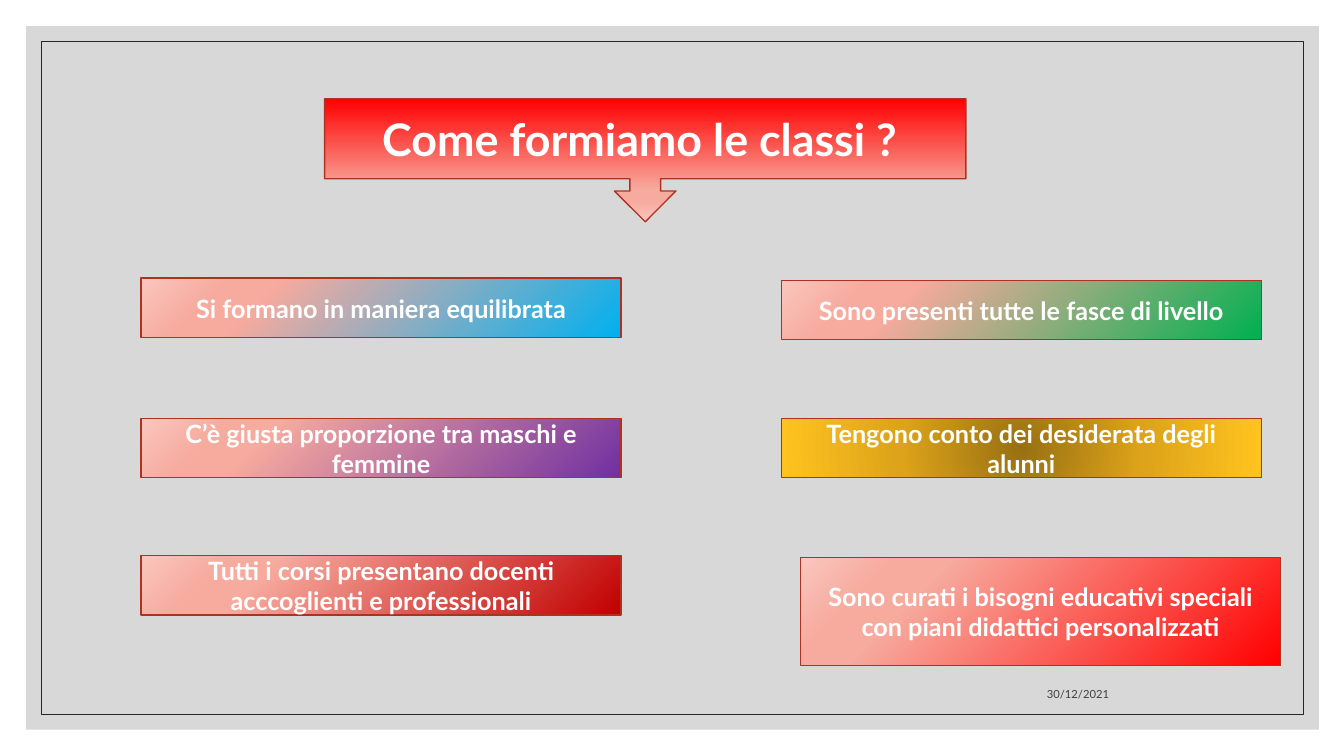
from pptx import Presentation
from pptx.dml.color import RGBColor as RGB
from pptx.enum.shapes import MSO_SHAPE as Shape
from pptx.enum.text import MSO_ANCHOR as Anchor, PP_ALIGN as Align
from pptx.oxml import parse_xml
from pptx.oxml.ns import nsdecls, qn
from pptx.util import Inches, Pt
from lxml.etree import SubElement

COLORS = {
    "white": "FFFFFF", "panel": "BFBFBF", "frame": "262626",
    "date": "3F3F3F", "edge": "AD3320",
    "red": "FF0000", "dark": "C00000", "blue": "00B0F0",
    "green": "00B050", "purple": "7030A0",
    "rose": "F7AA9E", "pale": "FAC6BE",
    "brown": "987012", "ochre": "DDA31A", "gold": "FFC31F",
}
DOWN = '<a:lin ang="5400000" scaled="0"/>'
RADIAL = '<a:path path="circle"><a:fillToRect l="{0}" t="{0}" r="{1}" b="{1}"/></a:path>'
CORNER = RADIAL.format(100000, 0)
CENTER = RADIAL.format(50000, 50000)
GOLD = [(0, "brown"), (50, "ochre"), (100, "gold")]


def fade(color):
    return [(0, color), (74, "rose"), (83, "rose"), (100, "pale")]


class Deck:
    font = "Lato"

    def __init__(self):
        self.prs = Presentation()
        self.prs.slide_width, self.prs.slide_height = Inches(13.33), Inches(7.5)
        self.slide = self.prs.slides.add_slide(self.prs.slide_layouts[6])

    def color(self, name):
        return RGB.from_string(COLORS[name])

    def shape(self, kind, area, fill=None, line=None, width=1, alpha=None):
        shape = self.slide.shapes.add_shape(kind, *map(Inches, area))
        shape.shadow.inherit = False
        if fill:
            shape.fill.solid()
            shape.fill.fore_color.rgb = self.color(fill)
        else:
            shape.fill.background()
        if alpha:
            tint = shape._element.spPr.find(".//" + qn("a:srgbClr"))
            SubElement(tint, qn("a:alpha"), val=str(alpha * 1000))
        if line:
            shape.line.color.rgb = self.color(line)
            shape.line.width = Pt(width)
        else:
            shape.line.fill.background()
        return shape

    def blend(self, shape, stops, way):
        marks = "".join(
            f'<a:gs pos="{pos * 1000}"><a:srgbClr val="{COLORS[name]}"/></a:gs>'
            for pos, name in stops)
        grad = parse_xml(f'<a:gradFill {nsdecls("a")} rotWithShape="1">'
                         f'<a:gsLst>{marks}</a:gsLst>{way}</a:gradFill>')
        props = shape._element.spPr
        props.replace(props.find(qn("a:solidFill")), grad)

    def text(self, shape, words, size, color, align, anchor, bold=False):
        frame = shape.text_frame
        frame.word_wrap = True
        frame.vertical_anchor = anchor
        par = frame.paragraphs[0]
        par.text = words
        par.alignment = align
        font = par.font
        font.name, font.size, font.bold = self.font, Pt(size), bold
        font.color.rgb = self.color(color)

    def card(self, area, words, stops, way=CORNER, size=18, kind=Shape.RECTANGLE):
        shape = self.shape(kind, area, "white", "edge")
        self.blend(shape, stops, way)
        self.text(shape, words, size, "white", Align.CENTER, Anchor.MIDDLE, True)
        return shape

    def label(self, area, words):
        box = self.slide.shapes.add_textbox(*map(Inches, area))
        self.text(box, words, 8, "date", Align.RIGHT, Anchor.BOTTOM)


def main():
    deck = Deck()

    # Backdrop and frame
    deck.shape(Shape.RECTANGLE, (0, 0, 13.33, 7.5), "white")
    deck.shape(Shape.RECTANGLE, (0.26, 0.26, 12.82, 6.98), "panel", alpha=60)
    deck.shape(Shape.RECTANGLE, (0.41, 0.41, 12.52, 6.68), line="frame", width=0.75)

    # Date
    deck.label((7.94, 6.6, 3.16, 0.4), "30/12/2021")

    # Title callout
    title = deck.card((3.22, 0.98, 6.36, 1.22), "Come formiamo le classi ? ",
                      fade("red"), DOWN, 32, Shape.DOWN_ARROW_CALLOUT)
    for i, value in enumerate((0.25, 0.25, 0.25, 0.65)):
        title.adjustments[i] = value

    # Answer cards
    left, right, wide, high = 1.4, 7.75, 4.76, 0.59
    cards = [
        (left, 2.76, high, "Si formano in maniera equilibrata", fade("blue"), CORNER),
        (right, 2.78, high, "Sono presenti tutte le fasce di livello", fade("green"), CORNER),
        (left, 4.15, high, "C’è giusta proporzione tra maschi e femmine",
         fade("purple"), CORNER),
        (right, 4.15, high, "Tengono conto dei desiderata degli alunni", GOLD, CENTER),
        (left, 5.51, high, "Tutti i corsi presentano docenti acccoglienti e professionali",
         fade("dark"), CORNER),
        (7.94, 5.53, 1.07,
         "Sono curati i bisogni educativi speciali con piani didattici personalizzati",
         fade("red"), CORNER),
    ]
    for x, y, tall, words, stops, way in cards:
        deck.card((x, y, wide, tall), words, stops, way)

    deck.prs.save("out.pptx")


if __name__ == "__main__":
    main()
